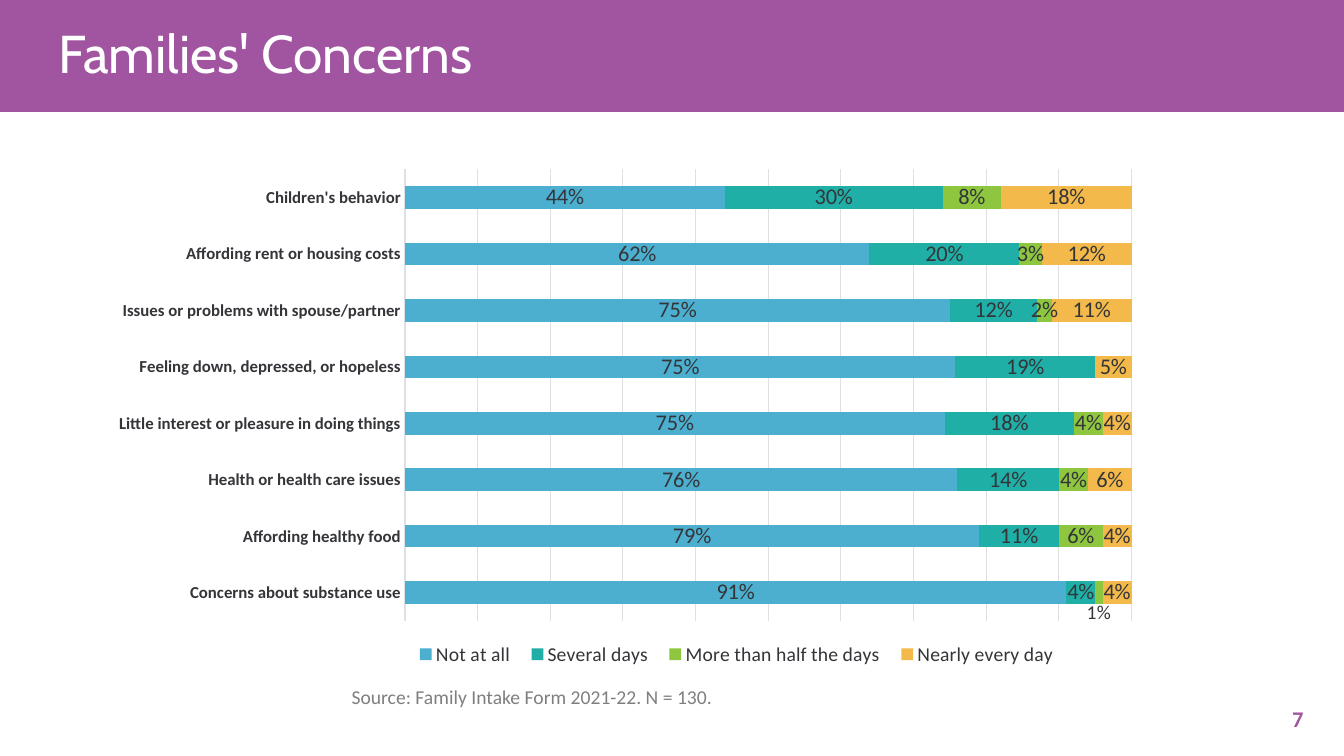
from dataclasses import dataclass

from lxml import etree
from pptx import Presentation
from pptx.chart.data import CategoryChartData
from pptx.dml.color import RGBColor
from pptx.enum.chart import (XL_CHART_TYPE, XL_LABEL_POSITION,
                             XL_LEGEND_POSITION, XL_TICK_MARK)
from pptx.enum.shapes import MSO_SHAPE
from pptx.enum.text import MSO_ANCHOR, PP_ALIGN
from pptx.oxml.ns import qn
from pptx.util import Cm, Pt

STACKED_BAR = XL_CHART_TYPE.BAR_STACKED_100
CENTER = XL_LABEL_POSITION.CENTER
BOTTOM = XL_LEGEND_POSITION.BOTTOM
NO_TICK = XL_TICK_MARK.NONE
RECTANGLE = MSO_SHAPE.RECTANGLE
MIDDLE = MSO_ANCHOR.MIDDLE
LEFT, RIGHT = PP_ALIGN.LEFT, PP_ALIGN.RIGHT

COLORS = {
    "purple": "A155A0", "white": "FFFFFF", "text": "333539", "grid": "DFE0E3",
    "gray": "7F7F7F", "blue": "4CAFCF", "teal": "20AFA7", "green": "8EC63F",
    "yellow": "F3B94A",
}
PERCENT = "0%"
PERCENT_NO_ZERO = "0%;;"


@dataclass
class Label:
    text: str
    box: tuple[float, float, float, float]
    size: int
    color: str
    font: str = "Calibri"
    bold: bool = False
    align: PP_ALIGN = LEFT
    line_spacing: float = 1.0


@dataclass
class Answer:
    name: str
    color: str
    shares: tuple[float, ...]


LABELS = [
    Label("Families' Concerns", (1.22, 0.69, 31.34, 1.45), 38, "white", "Cabin",
          line_spacing=0.9),
    Label("Source: Family Intake Form 2021-22. N = 130.",
          (8.61, 17.12, 19.35, 0.86), 14, "gray"),
    Label("7", (25.48, 17.6, 7.62, 1.02), 16, "purple", bold=True, align=RIGHT),
]
CONCERNS = [
    "Children's behavior", "Affording rent or housing costs",
    "Issues or problems with spouse/partner",
    "Feeling down, depressed, or hopeless",
    "Little interest or pleasure in doing things",
    "Health or health care issues", "Affording healthy food",
    "Concerns about substance use",
]
ANSWERS = [
    Answer("Not at all", "blue",
           (0.44, 0.62, 0.75, 0.75, 0.75, 0.76, 0.79, 0.91)),
    Answer("Several days", "teal",
           (0.3, 0.2, 0.12, 0.19, 0.18, 0.14, 0.11, 0.04)),
    Answer("More than half the days", "green",
           (0.08, 0.03, 0.02, 0, 0.04, 0.04, 0.06, 0.01)),
    Answer("Nearly every day", "yellow",
           (0.18, 0.12, 0.11, 0.05, 0.04, 0.06, 0.04, 0.04)),
]


def rgb(name: str) -> RGBColor:
    return RGBColor.from_string(COLORS[name])


def set_font(font, size: int, color: str, name: str = "Calibri",
             bold: bool = False) -> None:
    font.size, font.name, font.bold = Pt(size), name, bold
    font.color.rgb = rgb(color)


def add_label(slide, label: Label) -> None:
    tf = slide.shapes.add_textbox(*map(Cm, label.box)).text_frame
    tf.word_wrap = True
    tf.vertical_anchor = MIDDLE
    p = tf.paragraphs[0]
    p.text = label.text
    p.alignment = label.align
    p.line_spacing = label.line_spacing
    set_font(p.font, label.size, label.color, label.font, label.bold)


def set_layout(element, index: int, **settings: object) -> None:
    """Place a chart part by fractions of the chart, as child number index."""
    for old in element.findall(qn("c:layout")):
        element.remove(old)
    layout = etree.Element(qn("c:layout"))
    manual = etree.SubElement(layout, qn("c:manualLayout"))
    for tag, value in settings.items():
        etree.SubElement(manual, qn(f"c:{tag}")).set("val", str(value))
    element.insert(index, layout)


def style_axes(chart) -> None:
    axis = chart.category_axis
    axis.reverse_order = True
    axis.major_tick_mark = axis.minor_tick_mark = NO_TICK
    axis.format.line.color.rgb = rgb("grid")
    axis.format.line.width = Pt(0.75)
    set_font(axis.tick_labels.font, 12, "text", bold=True)

    axis = chart.value_axis
    axis.visible = False
    axis.minimum_scale, axis.maximum_scale, axis.major_unit = 0, 1, 0.1
    axis.tick_labels.number_format = PERCENT
    axis.tick_labels.number_format_is_linked = False
    axis.has_major_gridlines = True
    line = axis.major_gridlines.format.line
    line.color.rgb = rgb("grid")
    line.width = Pt(0.75)


def style_series(series, color: str) -> None:
    series.format.fill.solid()
    series.format.fill.fore_color.rgb = rgb(color)
    labels = series.data_labels
    labels.show_value = True
    labels.position = CENTER
    labels.number_format = PERCENT_NO_ZERO
    labels.number_format_is_linked = False
    set_font(labels.font, 16, "text")


def lower_last_label(series) -> None:
    """Move the label of the narrowest segment below its bar."""
    last = len(CONCERNS) - 1
    label = series.points[last].data_label
    set_font(label.font, 14, "text")
    label.position = CENTER
    for element in series.data_labels._element.findall(qn("c:dLbl")):
        set_layout(element, 1, x=0, y=0.04)


def add_concerns_chart(slide) -> None:
    data = CategoryChartData(number_format=PERCENT)
    data.categories = CONCERNS
    for answer in ANSWERS:
        data.add_series(answer.name, answer.shares)
    chart = slide.shapes.add_chart(
        STACKED_BAR, Cm(2.51), Cm(4.01), Cm(26.54), Cm(12.93), data).chart
    set_font(chart.font, 10, "text")
    chart.has_title = False
    plot = chart.plots[0]
    plot.gap_width, plot.overlap = 150, 100
    plot.vary_by_categories = False
    style_axes(chart)
    for series, answer in zip(plot.series, ANSWERS):
        style_series(series, answer.color)
    lower_last_label(plot.series[2])

    chart.has_legend = True
    legend = chart.legend
    legend.position = BOTTOM
    legend.include_in_layout = False
    set_font(legend.font, 14, "text")
    set_layout(legend._element, 1, xMode="edge", yMode="edge",
               x=0.29, y=0.93, w=0.63, h=0.07)
    plot_area = chart._chartSpace.find(".//" + qn("c:plotArea"))
    set_layout(plot_area, 0, layoutTarget="inner", xMode="edge", yMode="edge",
               x=0.29, y=0.02, w=0.69, h=0.88)


def main() -> None:
    prs = Presentation()
    prs.slide_width, prs.slide_height = Cm(33.87), Cm(19.05)
    slide = prs.slides.add_slide(prs.slide_layouts[6])

    banner = slide.shapes.add_shape(RECTANGLE, 0, 0, prs.slide_width, Cm(2.82))
    banner.shadow.inherit = False
    banner.fill.solid()
    banner.fill.fore_color.rgb = rgb("purple")
    banner.line.fill.background()

    add_concerns_chart(slide)
    for label in LABELS:
        add_label(slide, label)
    prs.save("out.pptx")


if __name__ == "__main__":
    main()
